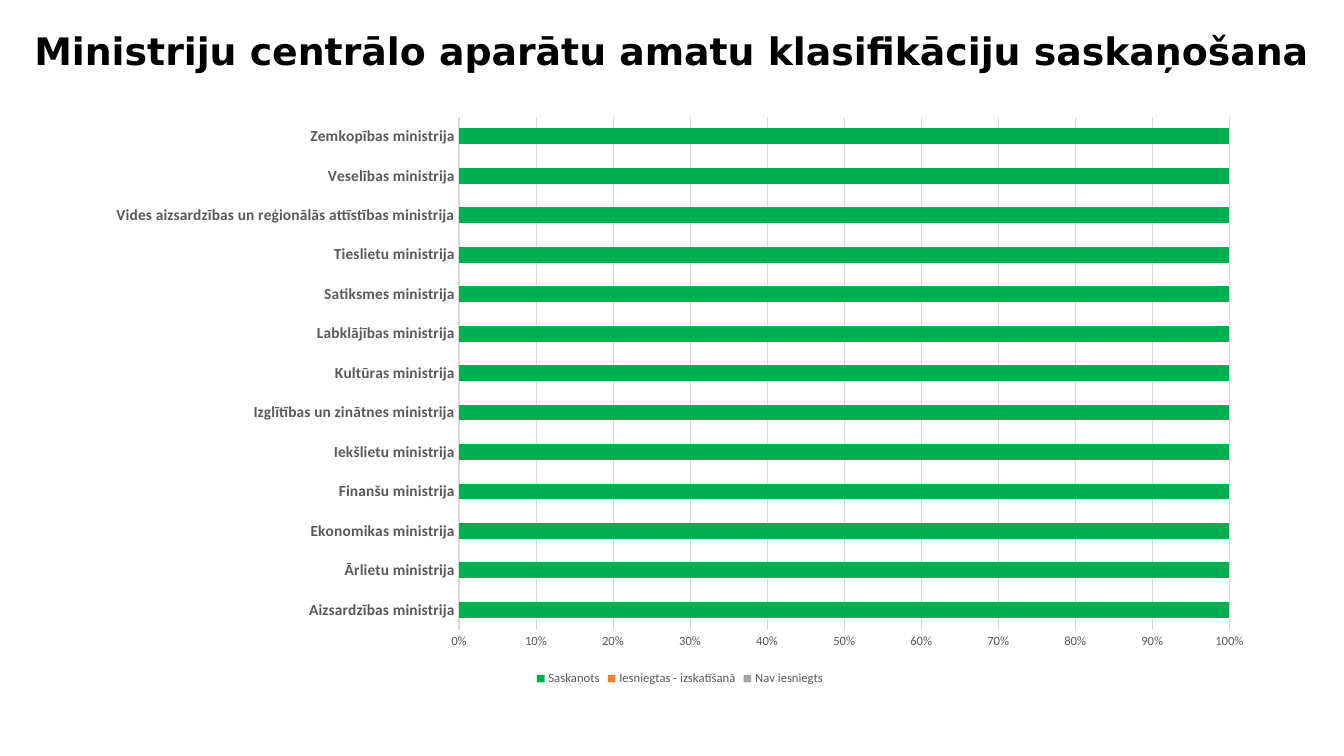
import pptx
import pptx.chart.data
import pptx.dml.color
import pptx.enum.chart
import pptx.enum.text
import pptx.util

PX_PER_INCH = 100.8
GREY = "595959"
MINISTRIES = [
    "Aizsardzības ministrija",
    "Ārlietu ministrija",
    "Ekonomikas ministrija",
    "Finanšu ministrija",
    "Iekšlietu ministrija",
    "Izglītības un zinātnes ministrija",
    "Kultūras ministrija",
    "Labklājības ministrija",
    "Satiksmes ministrija",
    "Tieslietu ministrija",
    "Vides aizsardzības un reģionālās attīstības ministrija",
    "Veselības ministrija",
    "Zemkopības ministrija",
]
# Status name, percentage for every ministry, colour
STATUSES = [
    ("Saskaņots", 100, "00B050"),
    ("Iesniegtas - izskatīšanā", None, "ED7D31"),
    ("Nav iesniegts", None, "A5A5A5"),
]


def emu(px):
    return pptx.util.Inches(px / PX_PER_INCH)


def colour(value):
    return pptx.dml.color.RGBColor.from_string(value)


def style_font(font, size, value, name="Calibri", bold=False):
    font.name = name
    font.size = pptx.util.Pt(size)
    font.bold = bold
    font.color.rgb = colour(value)


def add_title(slide, box, text):
    title = slide.shapes.title
    title.left, title.top, title.width, title.height = map(emu, box)
    frame = title.text_frame
    frame.word_wrap = True
    frame.auto_size = pptx.enum.text.MSO_AUTO_SIZE.NONE
    frame.vertical_anchor = pptx.enum.text.MSO_ANCHOR.MIDDLE
    frame.margin_left = frame.margin_right = 0
    para = frame.paragraphs[0]
    para.alignment = pptx.enum.text.PP_ALIGN.CENTER
    para.line_spacing = 0.9
    span = para.add_run()
    span.text = text
    style_font(span.font, 27, "000000", "DejaVu Sans", True)


def style_axis(axis, size, bold):
    axis.major_tick_mark = pptx.enum.chart.XL_TICK_MARK.NONE
    axis.minor_tick_mark = pptx.enum.chart.XL_TICK_MARK.NONE
    axis.format.line.fill.background()
    style_font(axis.tick_labels.font, size, GREY, bold=bold)


def add_status_chart(slide, box):
    data = pptx.chart.data.CategoryChartData()
    data.categories = MINISTRIES
    for name, share, _ in STATUSES:
        data.add_series(name, [share] * len(MINISTRIES))
    chart = slide.shapes.add_chart(
        pptx.enum.chart.XL_CHART_TYPE.BAR_STACKED_100, *map(emu, box), data
    ).chart
    chart.has_title = False
    style_font(chart.font, 10, "000000")

    # Bars
    plot = chart.plots[0]
    plot.gap_width = 150
    plot.overlap = 100
    plot.vary_by_categories = False
    for series, (_, _, fill) in zip(plot.series, STATUSES):
        series.format.fill.solid()
        series.format.fill.fore_color.rgb = colour(fill)

    # Axes and gridlines
    style_axis(chart.category_axis, 11, True)
    chart.category_axis.has_major_gridlines = False
    shares = chart.value_axis
    style_axis(shares, 9, False)
    shares.tick_labels.number_format = "0%"
    shares.tick_labels.number_format_is_linked = False
    shares.has_major_gridlines = True
    grid = shares.major_gridlines.format.line
    grid.width = pptx.util.Pt(0.75)
    grid.color.rgb = colour("D9D9D9")

    # Legend
    chart.has_legend = True
    chart.legend.position = pptx.enum.chart.XL_LEGEND_POSITION.BOTTOM
    chart.legend.include_in_layout = False
    style_font(chart.legend.font, 9, GREY)


def main():
    deck = pptx.Presentation()
    deck.slide_width, deck.slide_height = emu(1344), emu(756)
    slide = deck.slides.add_slide(deck.slide_layouts.get_by_name("Title Only"))
    add_title(slide, (18, 18, 1307, 71),
              "Ministriju centrālo aparātu amatu klasifikāciju saskaņošana")
    add_status_chart(slide, (93, 105, 1174, 585))
    deck.save("out.pptx")


if __name__ == "__main__":
    main()
